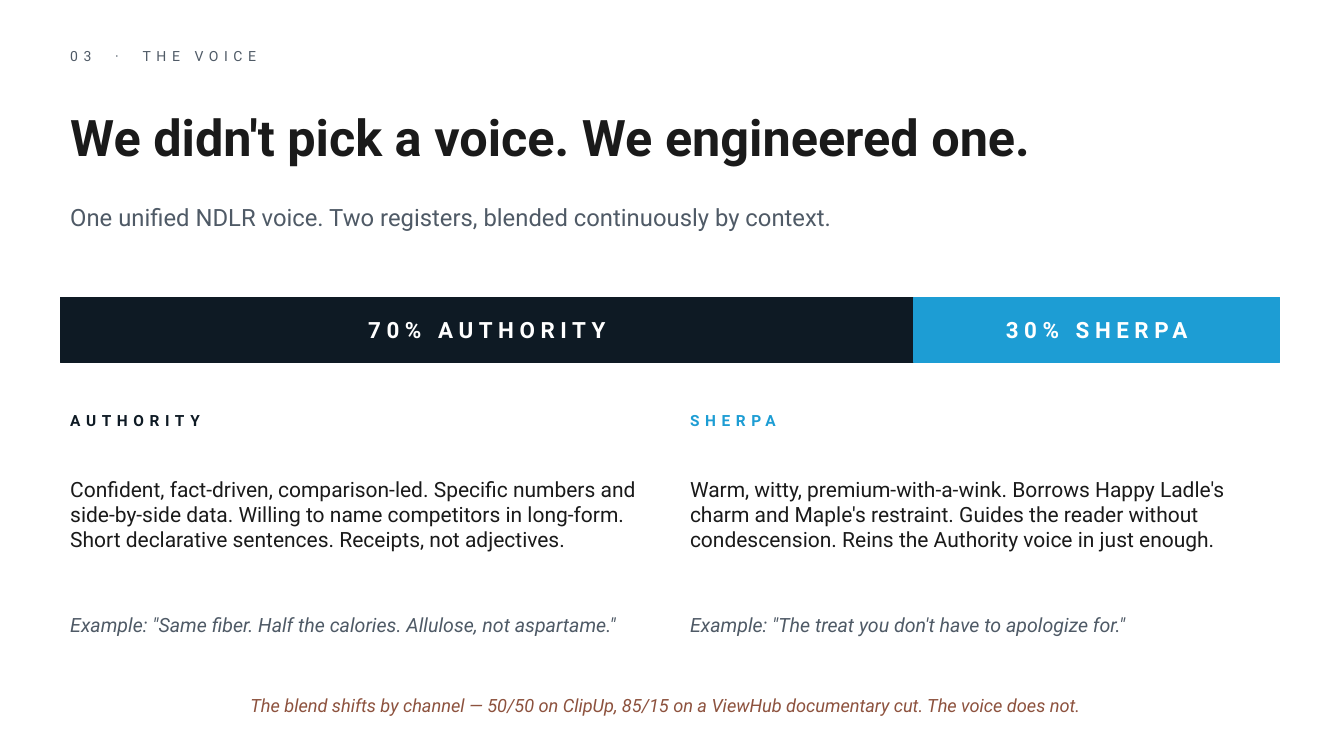
from pptx import Presentation
from pptx.dml.color import RGBColor
from pptx.enum.shapes import MSO_SHAPE
from pptx.enum.text import MSO_ANCHOR, PP_ALIGN
from pptx.util import Cm, Pt

RECT = MSO_SHAPE.RECTANGLE
MIDDLE = MSO_ANCHOR.MIDDLE
LEFT, CENTER = PP_ALIGN.LEFT, PP_ALIGN.CENTER

INK, GREY, NAVY, BLUE = "1A1A1A", "4F5A66", "0E1A24", "1D9DD4"
WHITE, RUST = "FFFFFF", "8D523E"
MARGIN, FULL_W = 1.52, 30.48
COL_W, COL_STEP = 15.11, 15.62
BAR_TOP, BAR_H = 7.49, 1.65


def rgb(value):
    return RGBColor.from_string(value)


def write(sp, text, size=15, color=INK, bold=False, italic=False,
          align=LEFT, spacing=0, gap=0):
    tf = sp.text_frame
    tf.word_wrap = True
    tf.vertical_anchor = MIDDLE
    p = tf.paragraphs[0]
    p.alignment = align
    for part in text if gap else [text]:
        r = p.add_run()
        r.text = part
        r.font.name = "Roboto"
        r.font.size = Pt(size)
        r.font.bold = bold
        r.font.italic = italic
        r.font.color.rgb = rgb(color)
        tracking = gap if part == " " else spacing
        if tracking:
            r._r.get_or_add_rPr().set("spc", str(int(tracking * 100)))


prs = Presentation()
prs.slide_width, prs.slide_height = Cm(33.87), Cm(19.05)
s = prs.slides.add_slide(prs.slide_layouts[6])

lines = [
    (1.02, 0.76, ["03", " ", "·", " ", "THE VOICE"],
     dict(size=10, color=GREY, spacing=4, gap=10.5)),
    (2.16, 2.54, "We didn't pick a voice. We engineered one.",
     dict(size=36, bold=True)),
    (4.83, 1.27, "One unified NDLR voice. Two registers, blended continuously by context.",
     dict(size=17, color=GREY)),
    (17.27, 1.02, "The blend shifts by channel — 50/50 on ClipUp, 85/15 on a ViewHub documentary cut. The voice does not.",
     dict(size=13, color=RUST, italic=True, align=CENTER)),
]
for top, height, text, style in lines:
    sp = s.shapes.add_textbox(Cm(MARGIN), Cm(top), Cm(FULL_W), Cm(height))
    write(sp, text, **style)

left = MARGIN
for label, width, color in [("70% AUTHORITY", 21.51, NAVY), ("30% SHERPA", 9.22, BLUE)]:
    sp = s.shapes.add_shape(RECT, Cm(left), Cm(BAR_TOP), Cm(width), Cm(BAR_H))
    sp.shadow.inherit = False
    sp.fill.solid()
    sp.fill.fore_color.rgb = rgb(color)
    sp.line.color.rgb = rgb(color)
    sp.line.width = Pt(1)
    write(sp, label, size=16, color=WHITE, bold=True, align=CENTER, spacing=4)
    left += width

registers = [
    ("AUTHORITY", NAVY,
     "Confident, fact-driven, comparison-led. Specific numbers and side-by-side data. "
     "Willing to name competitors in long-form. Short declarative sentences. "
     "Receipts, not adjectives.",
     'Example: "Same fiber. Half the calories. Allulose, not aspartame."'),
    ("SHERPA", BLUE,
     "Warm, witty, premium-with-a-wink. Borrows Happy Ladle's charm and Maple's restraint. "
     "Guides the reader without condescension. Reins the Authority voice in just enough.",
     'Example: "The treat you don\'t have to apologize for."'),
]
for i, (name, color, traits, example) in enumerate(registers):
    rows = [
        (10.16, 0.89, name, dict(size=11, color=color, bold=True, spacing=4)),
        (11.18, 3.56, traits, dict(size=15)),
        (14.99, 1.52, example, dict(size=14, color=GREY, italic=True)),
    ]
    for top, height, text, style in rows:
        sp = s.shapes.add_textbox(Cm(MARGIN + i * COL_STEP), Cm(top), Cm(COL_W), Cm(height))
        write(sp, text, **style)

prs.save("out.pptx")
